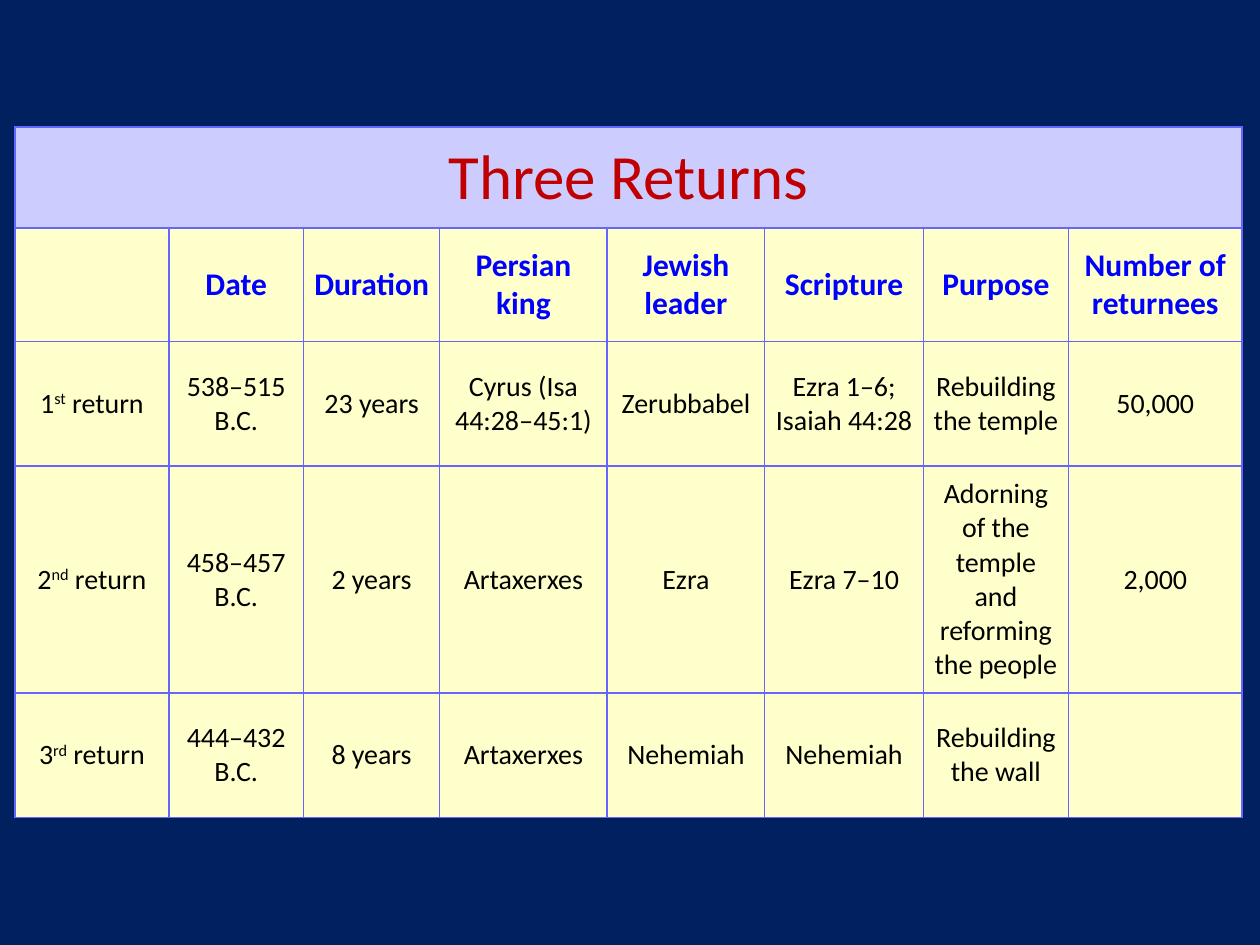
import pptx
import pptx.dml.color
import pptx.enum.text
import pptx.oxml
import pptx.oxml.ns
import pptx.util

COLORS = {
    "background": "002060",
    "title fill": "CCCCFF",
    "body fill": "FFFFCC",
    "border": "6666FF",
    "title": "C00000",
    "header": "0000FF",
    "body": "000000",
}
FONT = "Calibri"
LEFT, TOP = 0.12, 1.01
COLUMN_WIDTHS = [1.22, 1.07, 1.08, 1.33, 1.25, 1.26, 1.15, 1.38]
ROW_HEIGHTS = [0.8, 0.9, 0.99, 1.8, 0.99]
SIDE_MARGIN = 0.07

TITLE = "Three Returns"
HEADERS = ["", "Date", "Duration", "Persian king", "Jewish leader",
           "Scripture", "Purpose", "Number of returnees"]
# The first cell of each return is split into number, raised ending and noun.
RETURNS = [
    [("1", "st", " return"), "538–515 B.C.", "23 years", "Cyrus (Isa 44:28‒45:1)",
     "Zerubbabel", "Ezra 1–6; Isaiah 44:28", "Rebuilding the temple", "50,000"],
    [("2", "nd", " return"), "458–457 B.C.", "2 years", "Artaxerxes",
     "Ezra", "Ezra 7–10", "Adorning of the temple and reforming the people", "2,000"],
    [("3", "rd", " return"), "444–432 B.C.", "8 years", "Artaxerxes",
     "Nehemiah", "Nehemiah", "Rebuilding the wall", ""],
]


def rgb(name):
    return pptx.dml.color.RGBColor.from_string(COLORS[name])


def add_borders(cell):
    """Draw a 1 pt line on all four sides; call before the fill is set."""
    properties = cell._tc.get_or_add_tcPr()
    for side in ("lnL", "lnR", "lnT", "lnB"):
        properties.append(pptx.oxml.parse_xml(
            f'<a:{side} {pptx.oxml.ns.nsdecls("a")} w="{pptx.util.Pt(1)}">'
            f'<a:solidFill><a:srgbClr val="{COLORS["border"]}"/></a:solidFill>'
            f'</a:{side}>'))


deck = pptx.Presentation()
deck.slide_width = pptx.util.Inches(10)
deck.slide_height = pptx.util.Inches(7.5)
page = deck.slides.add_slide(deck.slide_layouts[6])
page.background.fill.solid()
page.background.fill.fore_color.rgb = rgb("background")

table = page.shapes.add_table(
    len(ROW_HEIGHTS), len(COLUMN_WIDTHS),
    pptx.util.Inches(LEFT), pptx.util.Inches(TOP),
    pptx.util.Inches(sum(COLUMN_WIDTHS)), pptx.util.Inches(sum(ROW_HEIGHTS))).table
table.first_row = False
table.horz_banding = False
for column, width in zip(table.columns, COLUMN_WIDTHS):
    column.width = pptx.util.Inches(width)
for row, height in zip(table.rows, ROW_HEIGHTS):
    row.height = pptx.util.Inches(height)

title_row = [TITLE] + [""] * (len(COLUMN_WIDTHS) - 1)
styles = [("title", 36, False), ("header", 18, True)] + [("body", 16, False)] * len(RETURNS)

for row, texts, (style, size, bold) in zip(table.rows, [title_row, HEADERS] + RETURNS, styles):
    for cell, text in zip(row.cells, texts):
        add_borders(cell)
        cell.fill.solid()
        cell.fill.fore_color.rgb = rgb("title fill" if style == "title" else "body fill")
        cell.vertical_anchor = pptx.enum.text.MSO_ANCHOR.MIDDLE
        cell.margin_left = cell.margin_right = pptx.util.Inches(SIDE_MARGIN)
        cell.margin_top = cell.margin_bottom = 0

        para = cell.text_frame.paragraphs[0]
        para.alignment = pptx.enum.text.PP_ALIGN.CENTER
        para.font.name = FONT
        para.font.size = pptx.util.Pt(size)
        para.font.bold = bold
        para.font.color.rgb = rgb(style)
        parts = (text,) if isinstance(text, str) else text
        for position, part in enumerate(parts):
            if part:
                span = para.add_run()
                span.text = part
                if position == 1:
                    span._r.get_or_add_rPr().set("baseline", "30000")

table.cell(0, 0).merge(table.cell(0, len(COLUMN_WIDTHS) - 1))

deck.save("out.pptx")
